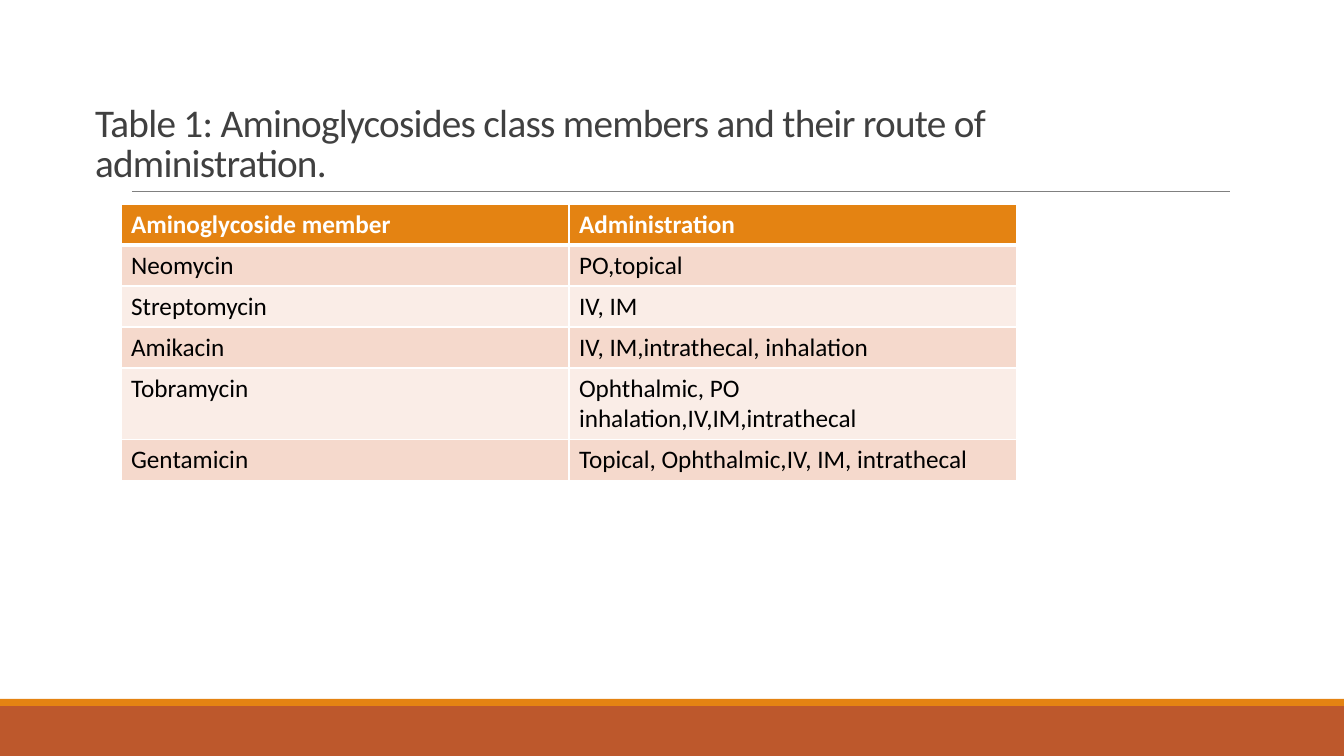
import pptx
import pptx.chart.data
import pptx.dml.color
import pptx.enum.shapes
import pptx.enum.text
import pptx.oxml
import pptx.oxml.ns
import pptx.util

SCALE = 914400 / 100.8
HUES = {
    "rust": "BD582C", "orange": "E48312", "rule": "808080", "title": "404040",
    "white": "FFFFFF", "black": "000000", "dark": "F5D9CC", "light": "FAEDE7",
}
FONT = "Calibri"
ROWS = [
    ("Aminoglycoside member", "Administration"),
    ("Neomycin", "PO,topical"),
    ("Streptomycin", "IV, IM"),
    ("Amikacin", "IV, IM,intrathecal, inhalation"),
    ("Tobramycin", "Ophthalmic, PO inhalation,IV,IM,intrathecal"),
    ("Gentamicin", "Topical, Ophthalmic,IV, IM, intrathecal"),
]


def px(count):
    return pptx.util.Emu(round(count * SCALE))


def hue(name):
    return pptx.dml.color.RGBColor.from_string(HUES[name])


def apply(target, values):
    for name, value in values.items():
        setattr(target, name, value)


def style(font, size, color, bold=False):
    apply(font, {"name": FONT, "size": pptx.util.Pt(size), "bold": bold})
    font.color.rgb = hue(color)


def band(slide, top, height, color):
    kind = pptx.enum.shapes.MSO_SHAPE.RECTANGLE
    shape = slide.shapes.add_shape(kind, 0, px(top), px(1344), px(height))
    shape.shadow.inherit = False
    shape.fill.solid()
    shape.fill.fore_color.rgb = hue(color)
    shape.line.fill.background()


def rule(slide, left, right, top):
    kind = pptx.enum.shapes.MSO_CONNECTOR.STRAIGHT
    line = slide.shapes.add_connector(kind, px(left), px(top), px(right), px(top))
    line.line.color.rgb = hue("rule")
    line.line.width = pptx.util.Pt(0.5)
    props = line._element.spPr
    props.append(props.makeelement(pptx.oxml.ns.qn("a:effectLst"), {}))


def head(slide, text):
    title = slide.shapes.title
    apply(title, {"left": px(85), "top": px(56), "width": px(1145), "height": px(135)})
    frame = title.text_frame
    frame.text = text
    apply(frame, {
        "word_wrap": True,
        "auto_size": pptx.enum.text.MSO_AUTO_SIZE.NONE,
        "vertical_anchor": pptx.enum.text.MSO_ANCHOR.BOTTOM,
    })
    para = frame.paragraphs[0]
    apply(para, {"alignment": pptx.enum.text.PP_ALIGN.LEFT, "line_spacing": 0.85})
    run = para.runs[0]
    style(run.font, 28, "title")
    run.font._element.set("spc", "-50")


def edge(cell, row):
    # Thick line between the header and the first row
    widths = {"lnL": 1, "lnR": 1, "lnT": 3 if row == 1 else 1, "lnB": 3 if row == 0 else 1}
    props = cell._tc.get_or_add_tcPr()
    for place, (tag, width) in enumerate(widths.items()):
        props.insert(place, pptx.oxml.parse_xml(
            f'<a:{tag} {pptx.oxml.ns.nsdecls("a")} w="{width * 12700}"><a:solidFill>'
            f'<a:srgbClr val="{HUES["white"]}"/></a:solidFill></a:{tag}>'))


def grid(slide, rows):
    table = slide.shapes.add_table(
        len(rows), 2, px(121), px(204), px(896), px(41 * len(rows))).table
    for col in table.columns:
        col.width = px(448)
    for row, texts in enumerate(rows):
        fill = "orange" if row == 0 else "dark" if row % 2 else "light"
        for col, text in enumerate(texts):
            cell = table.cell(row, col)
            cell.text = text
            cell.fill.solid()
            cell.fill.fore_color.rgb = hue(fill)
            style(cell.text_frame.paragraphs[0].runs[0].font, 18,
                  "black" if row else "white", row == 0)
            edge(cell, row)


def main():
    deck = pptx.Presentation()
    apply(deck, {"slide_width": px(1344), "slide_height": px(756)})
    slide = deck.slides.add_slide(deck.slide_layouts[5])

    # Footer bands and title rule
    band(slide, 706, 50, "rust")
    band(slide, 699, 7, "orange")
    rule(slide, 132, 1230, 191)

    # Title and table
    head(slide, "Table 1: Aminoglycosides class members and their route of administration.")
    grid(slide, ROWS)
    deck.save("out.pptx")


if __name__ == "__main__":
    main()
